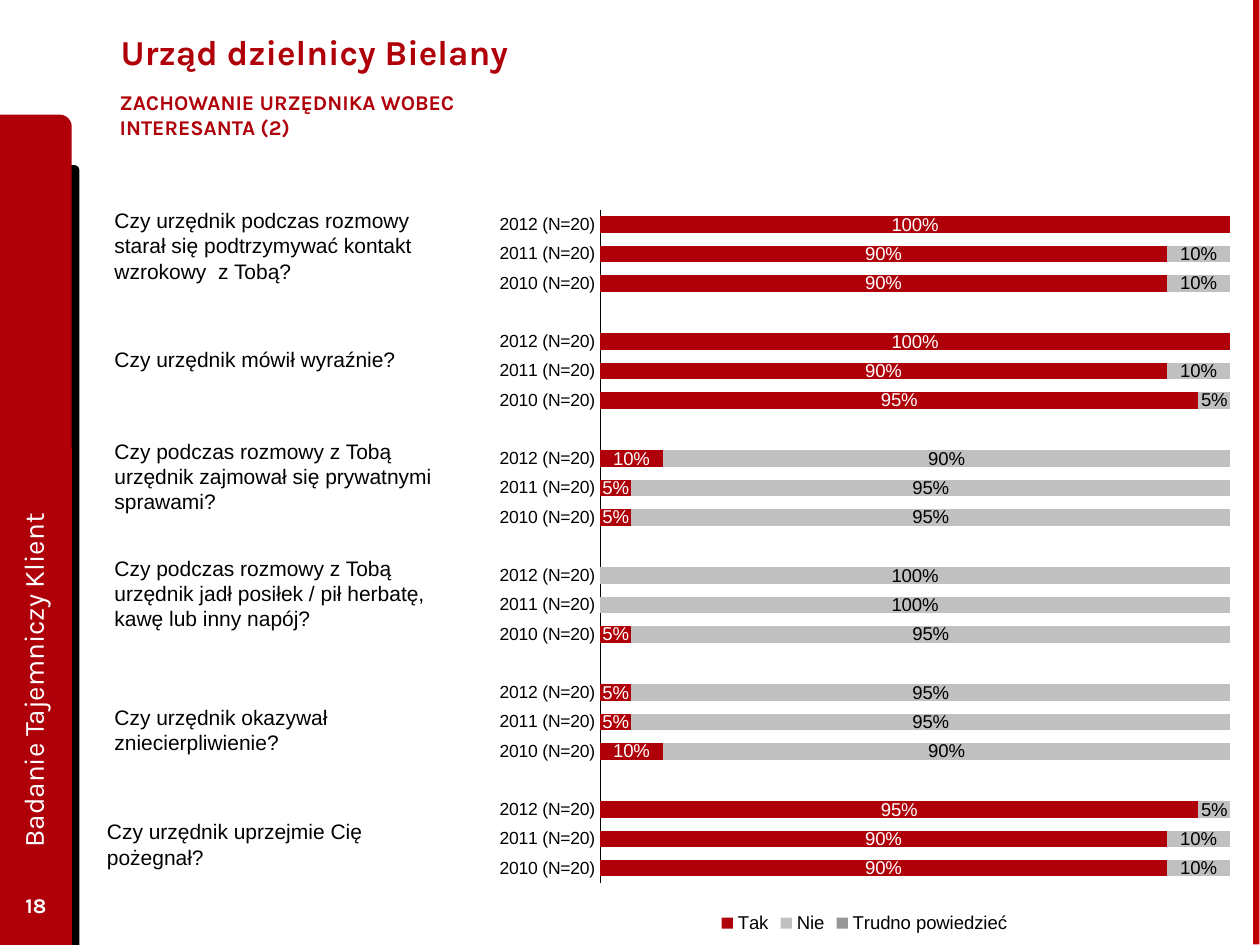
from dataclasses import dataclass
from typing import Any, Optional

from lxml import etree
from pptx import Presentation
from pptx import util as u
from pptx.chart.data import CategoryChartData
from pptx.dml.color import RGBColor
from pptx.enum import chart as ch, shapes, text
from pptx.oxml import parse_xml
from pptx.oxml.ns import nsdecls

RED = RGBColor(0xAF, 0x00, 0x0A)
EDGE_RED = RGBColor(0xBD, 0x00, 0x00)
BLACK = RGBColor(0, 0, 0)
WHITE = RGBColor(255, 255, 255)
SILVER = RGBColor(0xC0, 0xC0, 0xC0)
GREY = RGBColor(0x96, 0x96, 0x96)

# The slide is a grid of 100 columns by 75 rows.
SLIDE_W, SLIDE_H = u.Inches(10), u.Inches(7.5)
COL, ROW = SLIDE_W / 100, SLIDE_H / 75


@dataclass(frozen=True)
class Area:
    """A place on the slide, in grid columns and rows."""
    left: float
    top: float
    width: float
    height: float

    def emu(self) -> tuple[int, ...]:
        return (round(self.left * COL), round(self.top * ROW),
                round(self.width * COL), round(self.height * ROW))


@dataclass(frozen=True)
class Panel:
    area: Area
    outline: Any
    color: RGBColor
    rotation: float = 0


@dataclass(frozen=True)
class Label:
    words: str
    area: Area
    size: float = 12
    font: str = "Karla"
    color: RGBColor = RED
    bold: bool = False
    rotation: float = 0
    middle: bool = False
    centered: bool = False
    wrap: bool = True
    side_inset: float = 0.1


@dataclass(frozen=True)
class Question:
    words: str
    left: float
    top: float
    lines: int
    yes_shares: tuple[float, float, float]


YEARS = ("2012 (N=20)", "2011 (N=20)", "2010 (N=20)")
QUESTIONS = (
    Question("Czy urzędnik podczas rozmowy starał się podtrzymywać kontakt wzrokowy  z Tobą?",
             8.1, 16, 3, (1, 0.9, 0.9)),
    Question("Czy urzędnik mówił wyraźnie?", 8.1, 27, 1, (1, 0.9, 0.95)),
    Question("Czy podczas rozmowy z Tobą urzędnik zajmował się prywatnymi sprawami?",
             8.1, 34.3, 3, (0.1, 0.05, 0.05)),
    Question("Czy podczas rozmowy z Tobą urzędnik jadł posiłek / pił herbatę, "
             "kawę lub inny napój?", 8.1, 43.6, 3, (0, 0, 0.05)),
    Question("Czy urzędnik okazywał zniecierpliwienie?", 8.1, 55.4, 2, (0.05, 0.05, 0.1)),
    Question("Czy urzędnik uprzejmie Cię pożegnał?", 7.5, 64.5, 2, (0.95, 0.9, 0.9)),
)
PANELS = (
    Panel(Area(3.9, 13.1, 2.4, 61.9), shapes.MSO_SHAPE.ROUND_1_RECTANGLE, BLACK),
    Panel(Area(0, 9.1, 5.7, 65.9), shapes.MSO_SHAPE.ROUND_1_RECTANGLE, RED),
    Panel(Area(62.2, 37.2, 75, 0.5), shapes.MSO_SHAPE.RECTANGLE, EDGE_RED, 90),
)
HEADINGS = (
    Label("Urząd dzielnicy Bielany", Area(8.6, 0.5, 77.7, 7.2), 20, bold=True, middle=True),
    Label("ZACHOWANIE URZĘDNIKA WOBEC INTERESANTA (2)", Area(7.5, 6.6, 38.5, 3.3),
          bold=True, wrap=False, side_inset=0.2),
)
SIDEBAR = (
    Label("18", Area(0, 69.8, 5.7, 4), color=WHITE, bold=True, middle=True, centered=True),
    Label("Badanie Tajemniczy Klient", Area(-26.2, 36.9, 57.6, 5.1), 16, color=WHITE,
          rotation=270, middle=True),
)
CHART_AREA = Area(38.4, 15.5, 60.4, 59)
PLOT_SHARES = {"x": 0.1526, "y": 0.02, "w": 0.828, "h": 0.905}


def apply(target: Any, values: dict[str, Any]) -> None:
    for name, value in values.items():
        setattr(target, name, value)


def set_font(font: Any, size: float, name: str, color: RGBColor, bold: bool = False) -> None:
    apply(font, {"size": u.Pt(size), "name": name, "bold": bold})
    font.color.rgb = color


def draw_panel(slide: Any, panel: Panel) -> None:
    shape = slide.shapes.add_shape(panel.outline, *panel.area.emu())
    shape.rotation = panel.rotation
    shape.shadow.inherit = False
    shape.fill.solid()
    shape.fill.fore_color.rgb = panel.color
    shape.line.fill.background()


def draw_label(slide: Any, label: Label) -> None:
    box = slide.shapes.add_textbox(*label.area.emu())
    box.rotation = label.rotation
    apply(box.text_frame, {
        "word_wrap": label.wrap,
        "vertical_anchor": text.MSO_ANCHOR.MIDDLE if label.middle else text.MSO_ANCHOR.TOP,
        "margin_left": u.Inches(label.side_inset),
        "margin_right": u.Inches(label.side_inset),
    })
    paragraph = box.text_frame.paragraphs[0]
    paragraph.alignment = text.PP_ALIGN.CENTER if label.centered else text.PP_ALIGN.LEFT
    run = paragraph.add_run()
    run.text = label.words
    set_font(run.font, label.size, label.font, label.color, label.bold)


def draw_question(slide: Any, question: Question) -> None:
    area = Area(question.left, question.top, 27.2, 1 + 2 * question.lines)
    draw_label(slide, Label(question.words, area, font="Arial", color=BLACK))


def answer_data() -> CategoryChartData:
    """Three years per question, with an empty row between questions."""
    data = CategoryChartData(number_format="0%")
    years: list[str] = []
    yes: list[Optional[float]] = []
    no: list[Optional[float]] = []
    for question in QUESTIONS:
        if years:
            years.append("")
            yes.append(None)
            no.append(None)
        years.extend(YEARS)
        yes.extend(share or None for share in question.yes_shares)
        no.extend(round(1 - share, 2) or None for share in question.yes_shares)
    data.categories = years
    data.add_series("Tak", yes)
    data.add_series("Nie", no)
    data.add_series("Trudno powiedzieć", [None] * len(years))
    return data


def fix_plot_area(chart: Any) -> None:
    """Place the inner plot area by shares of the chart's size."""
    plot_area = chart.plots[0]._element.getparent()
    for old in plot_area.findall("{*}layout"):
        plot_area.remove(old)
    layout = parse_xml(f'<c:layout {nsdecls("c")}><c:manualLayout/></c:layout>')
    settings = {"layoutTarget": "inner", "xMode": "edge", "yMode": "edge", **PLOT_SHARES}
    namespace = etree.QName(layout).namespace
    for tag, value in settings.items():
        etree.SubElement(layout[0], f"{{{namespace}}}{tag}").set("val", str(value))
    plot_area.insert(0, layout)


def draw_answers(slide: Any) -> None:
    chart = slide.shapes.add_chart(ch.XL_CHART_TYPE.BAR_STACKED, *CHART_AREA.emu(),
                                   answer_data()).chart
    set_font(chart.font, 10.6, "Arial", BLACK)
    apply(chart, {"has_title": False, "has_legend": True})
    apply(chart.legend, {"position": ch.XL_LEGEND_POSITION.BOTTOM, "include_in_layout": False})
    plot = chart.plots[0]
    apply(plot, {"gap_width": 75, "overlap": 100, "vary_by_categories": False})

    no_ticks = {"major_tick_mark": ch.XL_TICK_MARK.NONE, "minor_tick_mark": ch.XL_TICK_MARK.NONE,
                "has_major_gridlines": False}
    years, shares = chart.category_axis, chart.value_axis
    apply(years, {**no_ticks, "reverse_order": True})
    set_font(years.tick_labels.font, 10, "Arial", BLACK)
    years.format.line.color.rgb = BLACK
    years.format.line.width = u.Pt(0.23)
    apply(shares, {**no_ticks, "minimum_scale": 0, "maximum_scale": 1, "major_unit": 0.2,
                   "tick_label_position": ch.XL_TICK_LABEL_POSITION.NONE})
    shares.format.line.fill.background()

    for series, fill, ink in zip(plot.series, (RED, SILVER, GREY), (WHITE, BLACK, None)):
        series.format.fill.solid()
        series.format.fill.fore_color.rgb = fill
        series.invert_if_negative = False
        if ink is not None:
            apply(series.data_labels, {"show_value": True, "number_format": "0%",
                                       "number_format_is_linked": False})
            set_font(series.data_labels.font, 10.6, "Arial", ink)
    fix_plot_area(chart)


def main() -> None:
    deck = Presentation()
    apply(deck, {"slide_width": SLIDE_W, "slide_height": SLIDE_H})
    slide = deck.slides.add_slide(deck.slide_layouts[6])
    for panel in PANELS:
        draw_panel(slide, panel)
    for heading in HEADINGS:
        draw_label(slide, heading)
    draw_answers(slide)
    for question in QUESTIONS:
        draw_question(slide, question)
    for label in SIDEBAR:
        draw_label(slide, label)
    deck.save("out.pptx")


if __name__ == "__main__":
    main()
